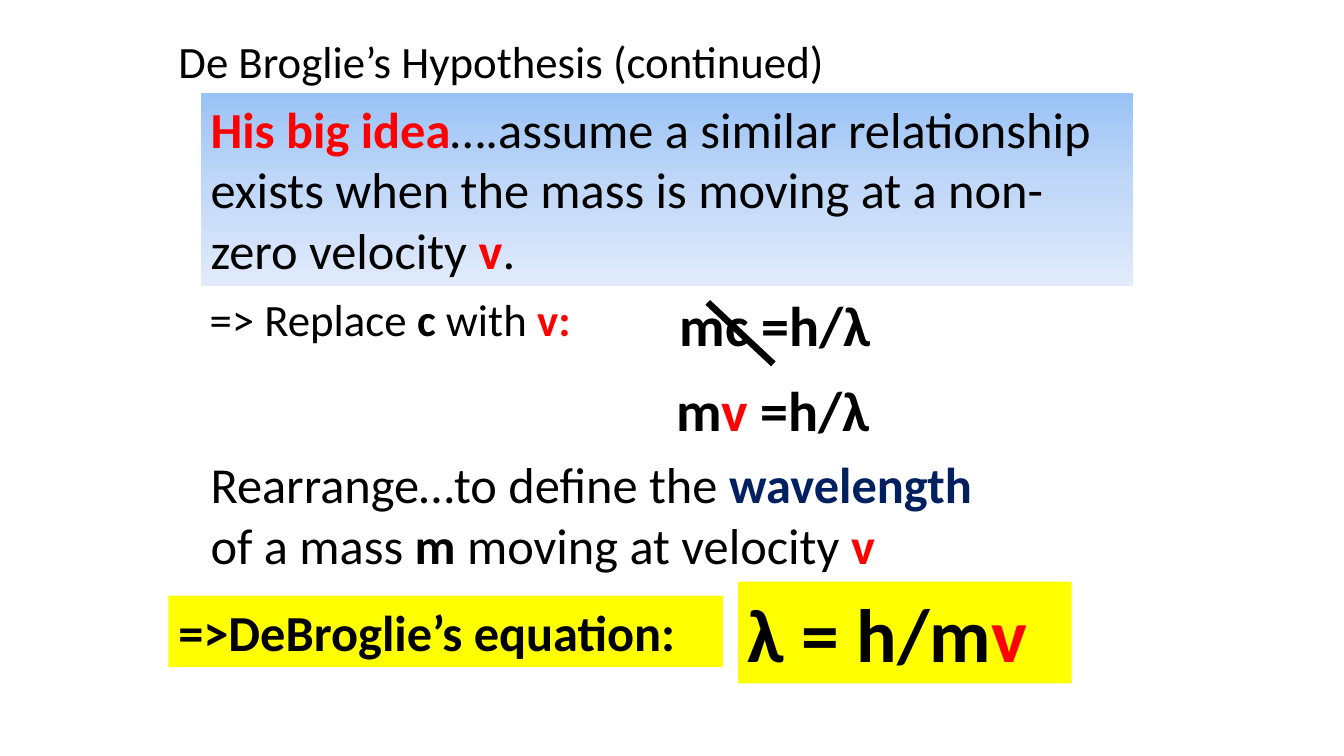
from copy import deepcopy
from dataclasses import dataclass

from pptx import Presentation
from pptx import util as u
from pptx.dml.color import RGBColor
from pptx.enum import shapes, text
from pptx.oxml import ns
from pptx.oxml.xmlchemy import OxmlElement


@dataclass(frozen=True)
class Theme:
    font: str = "Calibri"
    ink: str = "000000"
    accent: str = "FF0000"
    navy: str = "002060"
    highlight: str = "FFFF00"
    gradient: tuple = ((0, "9AC3F5"), (0.5, "C2D8F8"), (1, "E1EBFB"))
    small: int = 32
    body: int = 36
    formula: int = 40
    result: int = 54
    strike: float = 4.75


T = Theme()


def rgb(value):
    return RGBColor.from_string(value)


def plain(words):
    return words, T.ink, False


def bold(words, color=T.ink):
    return words, color, True


def red(words):
    return bold(words, T.accent)


def place(sp, box):
    sp.left, sp.top, sp.width, sp.height = (u.Inches(v) for v in box)


def write(sp, size, runs, wrap=True):
    """Fill a shape with one left-aligned paragraph of styled runs."""
    tf = sp.text_frame
    tf.word_wrap = wrap
    tf.auto_size = text.MSO_AUTO_SIZE.SHAPE_TO_FIT_TEXT
    tf.vertical_anchor = text.MSO_ANCHOR.TOP
    p = tf.paragraphs[0]
    p.alignment = text.PP_ALIGN.LEFT
    for words, color, is_bold in runs:
        r = p.add_run()
        r.text = words
        r.font.name, r.font.size, r.font.bold = T.font, u.Pt(size), is_bold
        r.font.color.rgb = rgb(color)


def add_title(s, box, size, runs):
    place(s.shapes.title, box)
    write(s.shapes.title, size, runs)


def add_text(s, box, size, runs, wrap=True):
    sp = s.shapes.add_textbox(*(u.Inches(v) for v in box))
    write(sp, size, runs, wrap)


def add_panel(s, box, size, runs):
    sp = s.shapes.add_shape(shapes.MSO_SHAPE.RECTANGLE, *(u.Inches(v) for v in box))
    sp.shadow.inherit = False
    sp.fill.solid()
    sp.fill.fore_color.rgb = rgb(T.highlight)
    sp.line.fill.background()
    write(sp, size, runs)
    return sp


def shade(sp, stops):
    """Give a shape a top-to-bottom gradient."""
    sp.fill.gradient()
    sp.fill.gradient_angle = 270
    stop_list = sp._element.spPr.find(".//" + ns.qn("a:gsLst"))
    stop_list.insert(1, deepcopy(stop_list[0]))
    for stop, (position, color) in zip(sp.fill.gradient_stops, stops):
        stop.position = position
        stop.color.rgb = rgb(color)


def add_strike(s, start, end):
    line = s.shapes.add_connector(
        shapes.MSO_CONNECTOR.STRAIGHT, *(u.Inches(v) for v in start + end))
    line.line.color.rgb = rgb(T.ink)
    line.line.width = u.Pt(T.strike)
    line._element.spPr.append(OxmlElement("a:effectLst"))


def main():
    prs = Presentation()
    prs.slide_width, prs.slide_height = u.Inches(13.33), u.Inches(7.5)
    s = prs.slides.add_slide(prs.slide_layouts[5])

    # Title and main idea
    add_title(s, (1.67, 0.28, 7.83, 0.64), T.small,
              [plain("De Broglie’s Hypothesis (continued)")])
    idea = add_panel(s, (1.99, 0.92, 9.25, 1.92), T.body, [
        red("His big idea"),
        plain("….assume a similar relationship exists when the mass is "
              "moving at a non-zero velocity "),
        red("v"), plain(".")])
    shade(idea, T.gradient)

    # Replacing c with v
    add_text(s, (6.52, 2.83, 2.28, 0.77), T.formula, [bold(" mc =h/λ")], wrap=False)
    add_strike(s, (7.02, 3), (7.67, 3.61))
    add_text(s, (1.98, 2.84, 4.04, 0.64), T.small,
             [plain("=> Replace "), bold("c"), plain(" with "), red("v:")])
    add_text(s, (6.61, 3.68, 2.19, 0.77), T.formula,
             [bold("m"), red("v"), bold(" =h/λ")], wrap=False)

    # Rearranged result
    add_text(s, (1.99, 4.45, 8.17, 1.31), T.body, [
        plain("Rearrange…to define the "), bold("wavelength ", T.navy),
        plain("of a mass "), bold("m"), plain(" moving at velocity "), red("v")])
    add_panel(s, (7.32, 5.77, 3.31, 1.01), T.result, [bold("λ = h/m"), red("v")])
    add_panel(s, (1.67, 5.91, 5.5, 0.71), T.body, [bold("=>DeBroglie’s equation:")])

    prs.save("out.pptx")


if __name__ == "__main__":
    main()
